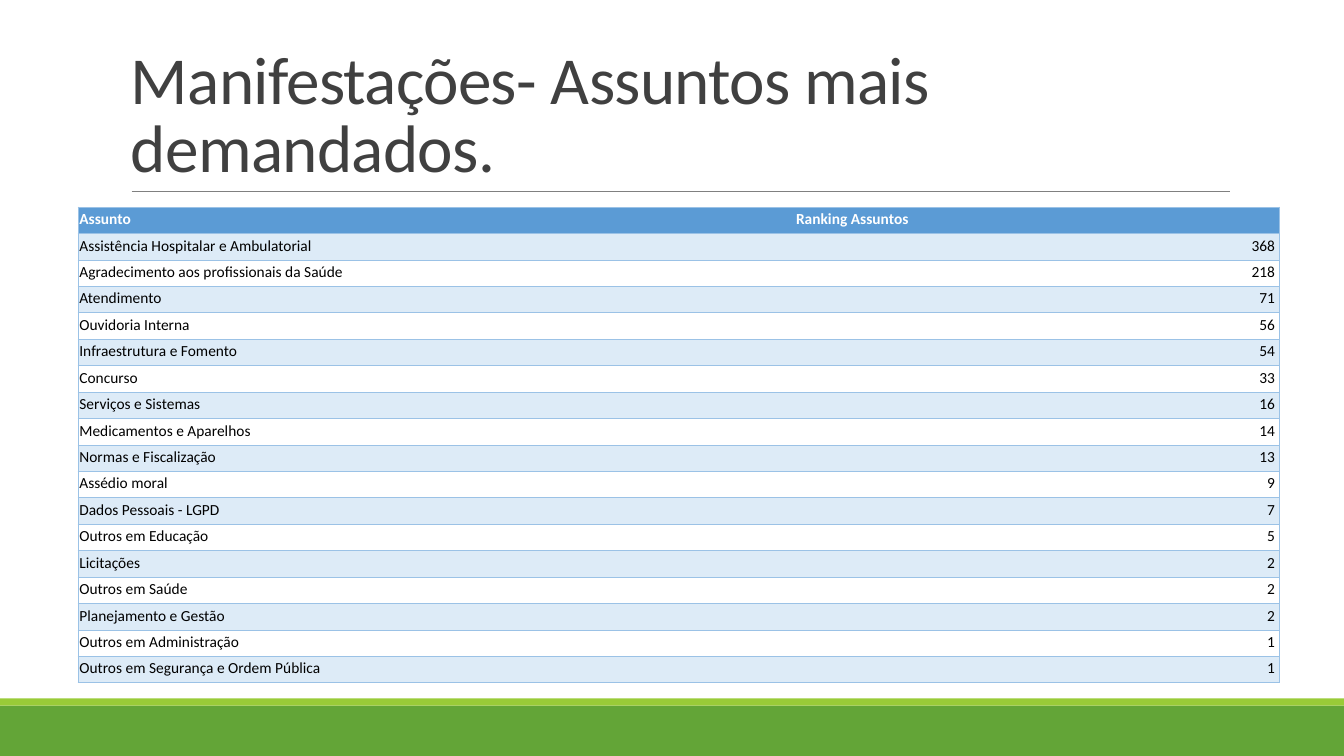
import pptx
import pptx.util
import pptx.dml.color
import pptx.enum.shapes
import pptx.enum.text
import pptx.oxml
import pptx.oxml.ns

Cm = pptx.util.Cm
Pt = pptx.util.Pt
ALIGN = pptx.enum.text.PP_ALIGN
ANCHOR = pptx.enum.text.MSO_ANCHOR

TITLE = "Manifestações- Assuntos mais demandados."
HEAD = ("Assunto", "Ranking Assuntos")
TOPICS = [
    ("Assistência Hospitalar e Ambulatorial", 368),
    ("Agradecimento aos profissionais da Saúde", 218),
    ("Atendimento", 71),
    ("Ouvidoria Interna", 56),
    ("Infraestrutura e Fomento", 54),
    ("Concurso", 33),
    ("Serviços e Sistemas", 16),
    ("Medicamentos e Aparelhos", 14),
    ("Normas e Fiscalização", 13),
    ("Assédio moral", 9),
    ("Dados Pessoais - LGPD", 7),
    ("Outros em Educação", 5),
    ("Licitações", 2),
    ("Outros em Saúde", 2),
    ("Planejamento e Gestão", 2),
    ("Outros em Administração", 1),
    ("Outros em Segurança e Ordem Pública", 1),
]
HEX = {
    "green": "63A537", "lime": "99CB38", "rule": "808080",
    "title": "404040", "head": "5B9BD5", "band": "DDEBF7",
    "edge": "9BC2E6", "white": "FFFFFF", "black": "000000",
}
WIDE, HIGH = 33.87, 19.05
BARS = [(17.78, 1.27, "green"), (17.6, 0.18, "lime")]
COLS = (18.06, 12.22)
ROW = 0.65


def color(name):
    return pptx.dml.color.RGBColor.from_string(HEX[name])


def write(frame, text, size=11, ink="black", bold=False, align=ALIGN.LEFT,
          lead=None, track=None):
    par = frame.paragraphs[0]
    par.alignment = align
    par.line_spacing = lead
    run = par.add_run()
    run.text = text
    font = run.font
    font.name, font.size, font.bold = "Calibri", Pt(size), bold
    font.color.rgb = color(ink)
    if track:
        font._element.set("spc", str(track))


def border(cell, sides):
    props = cell._tc.get_or_add_tcPr()
    space = pptx.oxml.ns.nsdecls("a")
    for side in "LRTB":
        paint = "<a:noFill/>"
        if side in sides:
            paint = f'<a:solidFill><a:srgbClr val="{HEX["edge"]}"/></a:solidFill>'
        props.append(pptx.oxml.parse_xml(
            f'<a:ln{side} {space} w="9525">{paint}</a:ln{side}>'))


def add_bars(slide):
    for top, tall, name in BARS:
        bar = slide.shapes.add_shape(
            pptx.enum.shapes.MSO_SHAPE.RECTANGLE,
            0, Cm(top), Cm(WIDE), Cm(tall))
        bar.shadow.inherit = False
        bar.fill.solid()
        bar.fill.fore_color.rgb = color(name)
        bar.line.fill.background()


def add_title(slide):
    rule = slide.shapes.add_connector(
        pptx.enum.shapes.MSO_CONNECTOR.STRAIGHT,
        Cm(3.32), Cm(4.82), Cm(31), Cm(4.82))
    rule.line.color.rgb = color("rule")
    rule.line.width = Pt(0.5)
    rule._element.spPr.append(pptx.oxml.parse_xml(
        f'<a:effectLst {pptx.oxml.ns.nsdecls("a")}/>'))
    box = slide.shapes.add_textbox(Cm(3.05), Cm(0.79), Cm(27.94), Cm(4.03))
    frame = box.text_frame
    frame.word_wrap = True
    frame.vertical_anchor = ANCHOR.BOTTOM
    write(frame, TITLE, size=48, ink="title", lead=0.85, track=-50)


def add_grid(slide):
    rows = [HEAD] + TOPICS
    grid = slide.shapes.add_table(
        len(rows), len(COLS), Cm(1.97), Cm(5.22),
        Cm(sum(COLS)), Cm(ROW * len(rows))).table
    grid.horz_banding = False
    for col, width in zip(grid.columns, COLS):
        col.width = Cm(width)
    for r, row in enumerate(rows):
        grid.rows[r].height = Cm(ROW)
        top = r == 0
        for c, value in enumerate(row):
            cell = grid.cell(r, c)
            count = c == 1 and not top
            cell.margin_left = cell.margin_top = Cm(0.03)
            cell.margin_right = Cm(0.12 if count else 0.03)
            cell.margin_bottom = Cm(0.12)
            cell.vertical_anchor = ANCHOR.BOTTOM
            border(cell, "RTB" if c else "LTB")
            if top or r % 2:
                cell.fill.solid()
                cell.fill.fore_color.rgb = color("head" if top else "band")
            else:
                cell.fill.background()
            write(cell.text_frame, str(value), bold=top,
                  ink="white" if top else "black", lead=Pt(14.6),
                  align=ALIGN.RIGHT if count else ALIGN.LEFT)


def main():
    deck = pptx.Presentation()
    deck.slide_width, deck.slide_height = Cm(WIDE), Cm(HIGH)
    slide = deck.slides.add_slide(deck.slide_layouts[6])
    add_bars(slide)
    add_title(slide)
    add_grid(slide)
    deck.save("out.pptx")


if __name__ == "__main__":
    main()
